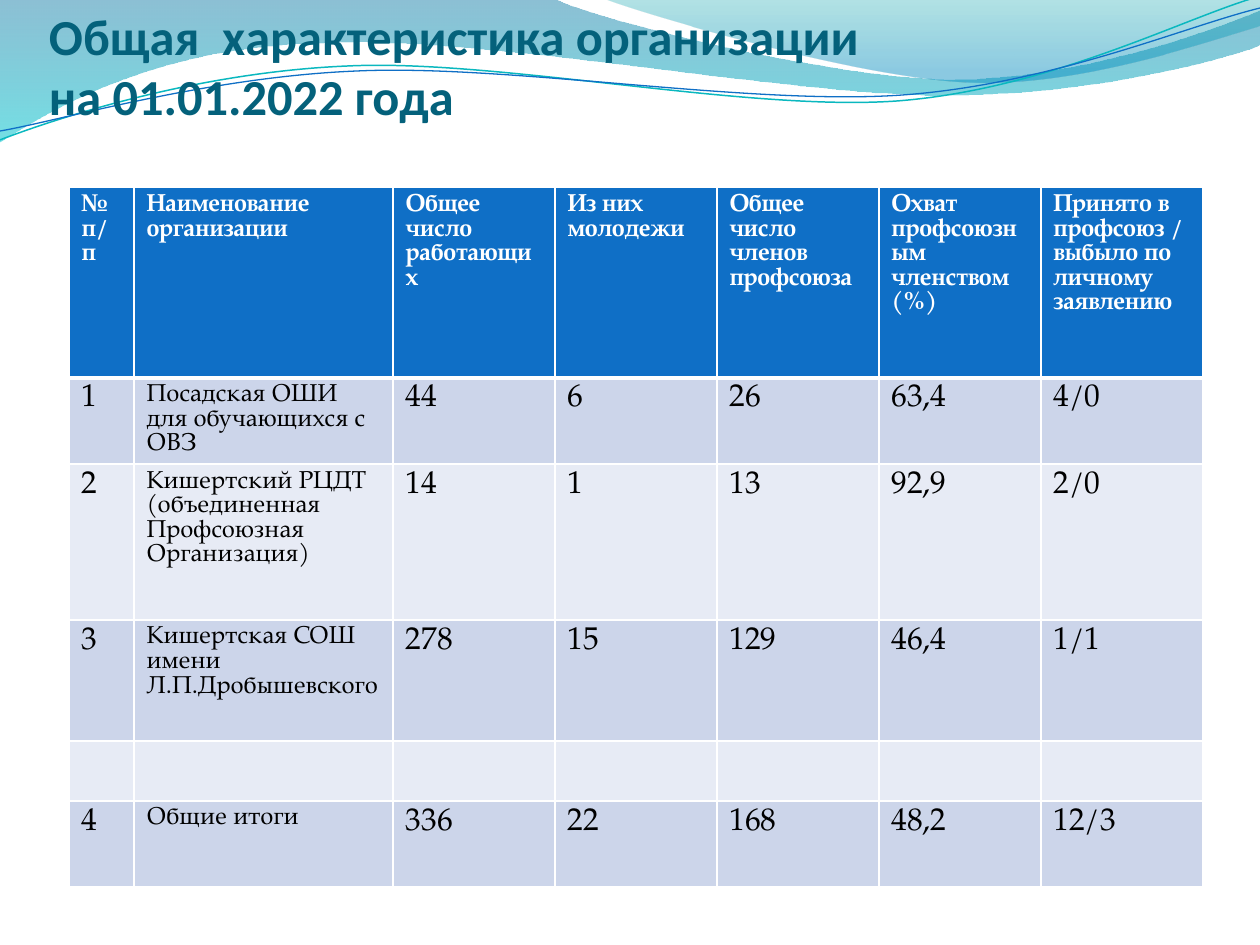
import copy
import math

from lxml import etree
from pptx import Presentation, util as u
from pptx.dml import color
from pptx.enum import text
from pptx.oxml import ns

PIXEL = 914400 // 126
WIDTH, HEIGHT = 1260, 945

TITLE = "Общая  характеристика организации\vна 01.01.2022 года\v"
TITLE_BOX = (49, 29, 1134, 157)
TITLE_TOP_INSET = 6
TABLE_LEFT, TABLE_TOP = 69, 187
COLUMN_WIDTHS = [65, 259] + [162] * 5
ROW_HEIGHTS = [191, 86, 156, 121, 60, 86]
ROWS = [
    ["№\nп/п", "Наименование организации", "Общее число работающих", "Из них молодежи",
     "Общее число членов профсоюза", "Охват профсоюзным членством (%)",
     "Принято в профсоюз / выбыло по личному заявлению"],
    ["1", "Посадская ОШИ для обучающихся с ОВЗ", "44", "6", "26", "63,4", "4/0"],
    ["2", "Кишертский РЦДТ (объединенная\nПрофсоюзная \nОрганизация)",
     "14", "1", "13", "92,9", "2/0"],
    ["3", "Кишертская СОШ имени Л.П.Дробышевского", "278", "15", "129", "46,4", "1/1"],
    [""] * 7,
    ["4", "Общие итоги", "336", "22", "168", "48,2", "12/3"],
]
HEADER_FILL, BAND_FILLS = "0F6FC6", ["E7EBF5", "CCD5EA"]
TABLE_FONT = "TeX Gyre Pagella"

# Each segment holds one point (straight) or three points (cubic curve).
WAVES = [
    {"start": (0, 0),
     "segments": [[(554, -1)], [(600, 21), (837, 79), (955, 79)],
                  [(1074, 79), (1207, 33), (1260, 11)], [(1261, 45)],
                  [(1239, 55), (1096, 96), (940, 95)], [(784, 95), (481, 35), (324, 43)],
                  [(163, 45), (58, 105), (-1, 142)]],
     "stops": [(0, "0074A1", 45), (1, "00C6CF", 55)]},
    {"start": (604, -1),
     "segments": [[(641, 14), (859, 78), (969, 82)], [(1079, 87), (1211, 40), (1260, 26)],
                  [(1260, 0)]],
     "stops": [(0, "00A1A9", 30), (0.8, "008BBF", 45)]},
    {"start": (0, 140),
     "segments": [[(60, 117), (199, 72), (349, 66)], [(498, 59), (747, 112), (898, 101)],
                  [(1050, 89), (1182, 19), (1257, -3)]],
     "line": ("0AB8BF", 0.85), "turn": -2.7, "center": (629, 72)},
    {"start": (0, 131),
     "segments": [[(59, 121), (207, 77), (357, 71)], [(508, 64), (752, 106), (903, 95)],
                  [(1053, 84), (1186, 26), (1260, 8)]],
     "line": ("0F6FC6", 0.75), "turn": -2.7, "center": (629, 74)},
]


def px(length):
    """Turn pixels into EMU."""
    return u.Emu(round(length * PIXEL))


def rgb(value):
    """Turn a hex string into a colour."""
    return color.RGBColor.from_string(value)


def write(frame, content, font, size, ink, bold=False, spacing=None):
    """Fill a text frame, one paragraph per line of content."""
    frame.word_wrap = True
    frame.text = content
    for paragraph in frame.paragraphs:
        paragraph.alignment = text.PP_ALIGN.LEFT
        paragraph.line_spacing = spacing
        for run in paragraph.runs:
            run.font.name, run.font.size, run.font.bold = font, u.Pt(size), bold
            run.font.color.rgb = rgb(ink)
        style = paragraph.runs[0]._r.rPr
        for line_break in paragraph._p.findall(ns.qn("a:br")):
            line_break.append(copy.deepcopy(style))
        ending = etree.SubElement(paragraph._p, ns.qn("a:endParaRPr"), **dict(style.attrib))
        ending.extend(copy.deepcopy(child) for child in style)


def rotate(point, center, degrees):
    """Turn a point clockwise about a center."""
    angle = math.radians(degrees)
    dx, dy = point[0] - center[0], point[1] - center[1]
    return (center[0] + dx * math.cos(angle) - dy * math.sin(angle),
            center[1] + dx * math.sin(angle) + dy * math.cos(angle))


def bend(shape, segments):
    """Join each three straight steps of a curved segment into one cubic curve."""
    steps = iter(list(shape._element.iter(ns.qn("a:lnTo"))))
    for segment in segments:
        parts = [next(steps) for _ in segment]
        if len(parts) == 3:
            curve = etree.Element(ns.qn("a:cubicBezTo"))
            parts[0].addprevious(curve)
            for part in parts:
                curve.append(part[0])
                part.getparent().remove(part)


def add_wave(slide, start, segments, stops=None, line=None, turn=0, center=(0, 0)):
    """Draw a gradient wave, or an open curve when a line is given."""
    points = [start] + [point for segment in segments for point in segment]
    first, *rest = [rotate(point, center, -turn) for point in points]
    builder = slide.shapes.build_freeform(px(first[0]), px(first[1]))
    builder.add_line_segments([(px(x), px(y)) for x, y in rest], close=line is None)
    shape = builder.convert_to_shape()
    bend(shape, segments)
    shape.rotation = turn
    shape.shadow.inherit = False
    if line:
        shape.fill.background()
        shape.line.color.rgb, shape.line.width = rgb(line[0]), u.Pt(line[1])
        return
    shape.line.fill.background()
    shape.fill.gradient()
    shape.fill.gradient_angle = 270
    for stop, (position, tint, _) in zip(shape.fill.gradient_stops, stops):
        stop.position, stop.color.rgb = position, rgb(tint)
    tints = shape._element.spPr.iter(ns.qn("a:srgbClr"))
    for element, (_, _, opacity) in zip(tints, stops):
        etree.SubElement(element, ns.qn("a:alpha"), val=str(opacity * 1000))


def add_borders(cell, top, bottom):
    """Give a cell white borders; top and bottom widths are in points."""
    properties = cell._tc.get_or_add_tcPr()
    for side, width in (("L", 1), ("R", 1), ("T", top), ("B", bottom)):
        border = etree.SubElement(properties, ns.qn("a:ln" + side), w=str(u.Pt(width)))
        fill = etree.SubElement(border, ns.qn("a:solidFill"))
        etree.SubElement(fill, ns.qn("a:srgbClr"), val="FFFFFF")


def add_title(slide):
    """Place the heading."""
    frame = slide.shapes.add_textbox(*map(px, TITLE_BOX)).text_frame
    frame.margin_left = frame.margin_right = frame.margin_bottom = 0
    frame.margin_top = px(TITLE_TOP_INSET)
    frame.vertical_anchor = text.MSO_ANCHOR.BOTTOM
    write(frame, TITLE, "Calibri", 28.8, "04617B", bold=True)


def add_membership_table(slide):
    """Place the membership table."""
    table = slide.shapes.add_table(
        len(ROWS), len(COLUMN_WIDTHS), px(TABLE_LEFT), px(TABLE_TOP),
        px(sum(COLUMN_WIDTHS)), px(sum(ROW_HEIGHTS))).table
    for column, width in zip(table.columns, COLUMN_WIDTHS):
        column.width = px(width)
    for r, (row, height) in enumerate(zip(ROWS, ROW_HEIGHTS)):
        table.rows[r].height = px(height)
        header = r == 0
        for c, content in enumerate(row):
            cell = table.cell(r, c)
            add_borders(cell, top=3 if r == 1 else 1, bottom=3 if header else 1)
            cell.fill.solid()
            cell.fill.fore_color.rgb = rgb(HEADER_FILL if header else BAND_FILLS[r % 2])
            if content:
                size = 14 if header or c == 1 else 18
                write(cell.text_frame, content, TABLE_FONT, size,
                      "FFFFFF" if header else "000000", bold=header, spacing=u.Pt(size))


def main():
    """Build and save the slide."""
    presentation = Presentation()
    presentation.slide_width, presentation.slide_height = px(WIDTH), px(HEIGHT)
    slide = presentation.slides.add_slide(presentation.slide_layouts[6])
    for wave in WAVES:
        add_wave(slide, **wave)
    add_title(slide)
    add_membership_table(slide)
    presentation.save("out.pptx")


main()
